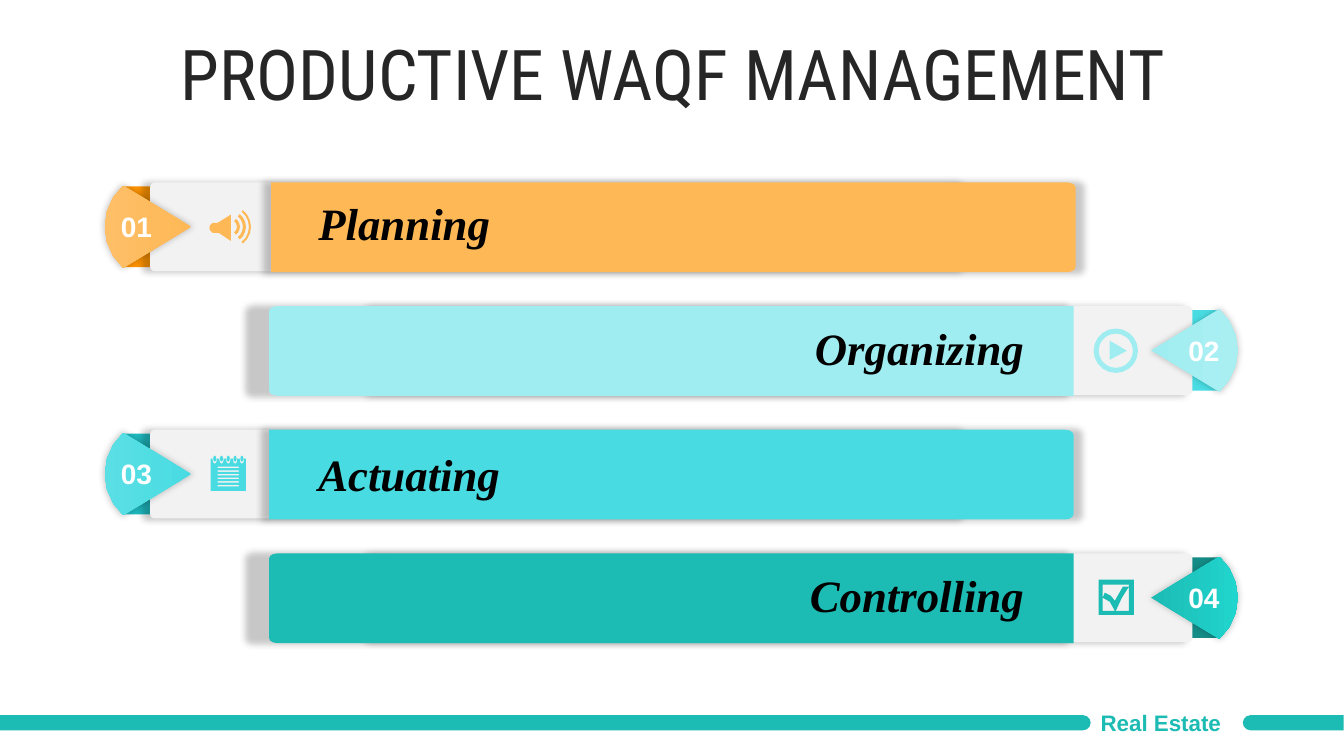
from dataclasses import dataclass
from math import ceil, cos, radians, sin

from lxml import etree
from pptx import Presentation
from pptx.dml.color import RGBColor
from pptx.enum.shapes import MSO_SHAPE
from pptx.enum.text import MSO_ANCHOR, MSO_AUTO_SIZE, PP_ALIGN
from pptx.oxml.ns import qn
from pptx.util import Inches, Pt

RECT, ROUNDED = MSO_SHAPE.RECTANGLE, MSO_SHAPE.ROUNDED_RECTANGLE
ROUND_END = MSO_SHAPE.ROUND_2_SAME_RECTANGLE
LEFT, RIGHT, CENTER, JUSTIFY = PP_ALIGN.LEFT, PP_ALIGN.RIGHT, PP_ALIGN.CENTER, PP_ALIGN.JUSTIFY
MIDDLE, TOP = MSO_ANCHOR.MIDDLE, MSO_ANCHOR.TOP
NO_FIT, GROW = MSO_AUTO_SIZE.NONE, MSO_AUTO_SIZE.SHAPE_TO_FIT_TEXT

TEAL, PANEL_GRAY, WHITE = "1CBBB4", "F2F2F2", "FFFFFF"
FIRST_TOP, LAST_TOP = 1.81, 5.49
MIRROR = 13.32  # a left x and its right-hand counterpart add up to this

Contour = list[tuple[float, float]]


@dataclass
class Step:
    number: str
    label: str
    label_top: float
    color: str
    glow: str
    fold: str
    icon: list[Contour]
    bar_left: float = 2.67


# Outlines
def arc(cx: float, cy: float, rx: float, ry: float, start: int, end: int,
        turn: int = 18) -> Contour:
    count = ceil(abs(end - start) / turn)
    angles = [radians(start + (end - start) * i / count) for i in range(count + 1)]
    return [(cx + rx * cos(a), cy + ry * sin(a)) for a in angles]


def box(left: float, top: float, right: float, bottom: float) -> Contour:
    return [(left, top), (right, top), (right, bottom), (left, bottom)]


def speaker_icon() -> list[Contour]:
    cone = [(2.29, 2.13), (2.29, 2.39), (2.17, 2.31), (2.11, 2.31), (2.08, 2.28),
            (2.08, 2.24), (2.11, 2.21), (2.16, 2.21)]
    waves = [arc(2.28, 2.25, outer, outer, -52, 52) + arc(2.28, 2.25, inner, inner, 52, -52)
             for outer, inner in ((0.1, 0.07), (0.16, 0.13), (0.21, 0.19))]
    return [cone, *waves]


def play_icon() -> list[Contour]:
    rings = [arc(11.07, 3.48, radius, radius, 0, 360)[:-1] for radius in (0.22, 0.17)]
    return [*rings, [(11.01, 3.38), (11.18, 3.48), (11.01, 3.57)]]


def notepad_icon() -> list[Contour]:
    centers = [2.13 + 0.27 * i / 4 for i in range(5)]
    page = [(2.09, 4.55)]
    for center in centers:
        page += [(center - 0.02, 4.55), *arc(center, 4.57, 0.02, 0.03, 180, 0, turn=45),
                 (center + 0.02, 4.55)]
    page += [(2.44, 4.55), (2.44, 4.87), (2.09, 4.87)]
    line_tops = [4.63 + 0.18 * i / 5 for i in range(6)]
    lines = [box(2.16, top, 2.37, top + 0.015) for top in line_tops]
    rings = [arc(center, 4.55, 0.015, 0.03, 0, 360, turn=45)[:-1] for center in centers]
    return [page, *lines, *rings]


def checkbox_icon() -> list[Contour]:
    tick = [(10.96, 5.88), (11.02, 5.91), (11.06, 5.96), (11.14, 5.82), (11.2, 5.82),
            (11.13, 5.93), (11.07, 6.06), (11.06, 6.06), (11.01, 5.97), (10.94, 5.93)]
    return [box(10.9, 5.75, 11.25, 6.1), box(10.94, 5.8, 11.2, 6.06), tick]


# Drawing
def rgb(color: str) -> RGBColor:
    return RGBColor.from_string(color)


def finish(shape, color: str) -> None:
    shape.fill.solid()
    shape.fill.fore_color.rgb = rgb(color)
    shape.line.fill.background()
    shape.shadow.inherit = False


def add_shadow(shape, shift: float) -> None:
    effects = shape._element.spPr.find(qn("a:effectLst"))
    shadow = etree.SubElement(effects, qn("a:outerShdw"), blurRad=str(Pt(5)),
                              dist=str(Inches(shift)), dir="10800000", sx="102000",
                              sy="102000", algn="ctr", rotWithShape="0")
    black = etree.SubElement(shadow, qn("a:srgbClr"), val="000000")
    etree.SubElement(black, qn("a:alpha"), val="22000")


def add_preset(slide, kind, left: float, top: float, width: float, height: float, color: str):
    shape = slide.shapes.add_shape(kind, Inches(left), Inches(top), Inches(width), Inches(height))
    finish(shape, color)
    return shape


def add_outline(slide, contours: list[Contour], color: str):
    builder = None
    for contour in contours:
        points = [(Inches(x), Inches(y)) for x, y in contour]
        if builder is None:
            builder = slide.shapes.build_freeform(*points[0], scale=1.0)
        else:
            builder.move_to(*points[0])
        builder.add_line_segments(points[1:], close=True)
    shape = builder.convert_to_shape()
    finish(shape, color)
    return shape


def write(shape, text: str, size: int, font: str, color: str, align, anchor,
          bold: bool = True, italic: bool = False, fit=GROW) -> None:
    frame = shape.text_frame
    frame.text = text
    frame.word_wrap = True
    frame.auto_size = fit
    frame.vertical_anchor = anchor
    paragraph = frame.paragraphs[0]
    paragraph.alignment = align
    style = paragraph.runs[0].font
    style.size, style.name, style.bold, style.italic = Pt(size), font, bold, italic
    style.color.rgb = rgb(color)


def add_text_area(slide, left: float, top: float, width: float, height: float):
    return slide.shapes.add_textbox(Inches(left), Inches(top), Inches(width), Inches(height))


def add_step(slide, step: Step, top: float, on_right: bool) -> None:
    def from_left(left: float, width: float) -> float:
        return MIRROR - left - width if on_right else left

    def place(contour: Contour) -> Contour:
        return [(from_left(x, 0), top + y) for x, y in contour]

    shift = 0.15 if on_right else 0
    # Fold and panel
    add_preset(slide, RECT, from_left(1.23, 0.79), top + 0.04, 0.79, 0.8, step.fold)
    panel = add_preset(slide, ROUNDED, from_left(1.49, 7.97), top, 7.97, 0.88, PANEL_GRAY)
    panel.adjustments[0] = 0.05
    add_shadow(panel, shift)
    # Wedge
    wedge = add_outline(slide, [place([(1.9, 0.44), *arc(1.59, 0.44, 0.55, 0.55, 132, 228)])],
                        step.color)
    wedge.fill.gradient()
    wedge.fill.gradient_angle = 0 if on_right else 180
    for stop, color in zip(wedge.fill.gradient_stops, (step.color, step.glow)):
        stop.color.rgb = rgb(color)
    add_shadow(wedge, 0)
    # Bar
    left, bend = step.bar_left, step.bar_left + 7.9
    corners = (arc(bend, 0.05, 0.08, 0.05, -90, 0, turn=30)
               + arc(bend, 0.84, 0.08, 0.05, 0, 90, turn=30))
    bar = add_outline(slide, [place([(left, 0), *corners, (left, 0.89)])], step.color)
    add_shadow(bar, shift)
    # Number, label and icon
    number = add_text_area(slide, from_left(1.08, 0.57), top + 0.22, 0.57, 0.44)
    write(number, step.number, 20, "Arial", WHITE, LEFT, TOP)
    number.text_frame.margin_left = number.text_frame.margin_right = Inches(0.12)
    label = add_text_area(slide, 3.06, step.label_top, 7.2, 0.64)
    write(label, step.label, 32, "Times New Roman", "000000", RIGHT if on_right else LEFT,
          TOP, italic=True)
    add_outline(slide, step.icon, step.color)


def add_footer(slide) -> None:
    for center, length, rotation in ((5.41, 10.82, 90), (12.83, 1, 270)):
        strip = add_preset(slide, ROUND_END, center - 0.075, 7.17 - length / 2, 0.15, length, TEAL)
        strip.rotation = rotation
        strip.adjustments[0] = 0.5
    write(add_text_area(slide, 10.82, 6.98, 1.51, 0.37), "Real Estate", 16, "Arial", TEAL,
          JUSTIFY, MIDDLE)


def add_title(slide) -> None:
    title = slide.shapes.title
    title.left, title.top = Inches(0.35), Inches(0.38)
    title.width, title.height = Inches(12.66), Inches(0.79)
    write(title, "PRODUCTIVE WAQF MANAGEMENT", 50, "Roboto Condensed", "262626", CENTER, MIDDLE,
          bold=False, fit=NO_FIT)
    title.text_frame.paragraphs[0].line_spacing = 0.9


def main() -> None:
    presentation = Presentation()
    presentation.slide_width, presentation.slide_height = Inches(40 / 3), Inches(7.5)
    slide = presentation.slides.add_slide(presentation.slide_layouts[5])
    steps = [
        Step("01", "Planning", 1.89, "FEB856", "FEBF67", "FE9401", speaker_icon(), 2.69),
        Step("02", "Organizing", 3.13, "9FEDF0", "A9EFF2", "49DDE3", play_icon()),
        Step("03", "Actuating", 4.38, "48DCE2", "5ADFE5", "1FBBC1", notepad_icon()),
        Step("04", "Controlling", 5.58, TEAL, "20D5CD", "158C87", checkbox_icon()),
    ]
    add_footer(slide)
    add_title(slide)
    pitch = (LAST_TOP - FIRST_TOP) / (len(steps) - 1)
    for index, step in enumerate(steps):
        add_step(slide, step, FIRST_TOP + index * pitch, on_right=index % 2 == 1)
    presentation.save("out.pptx")


if __name__ == "__main__":
    main()
